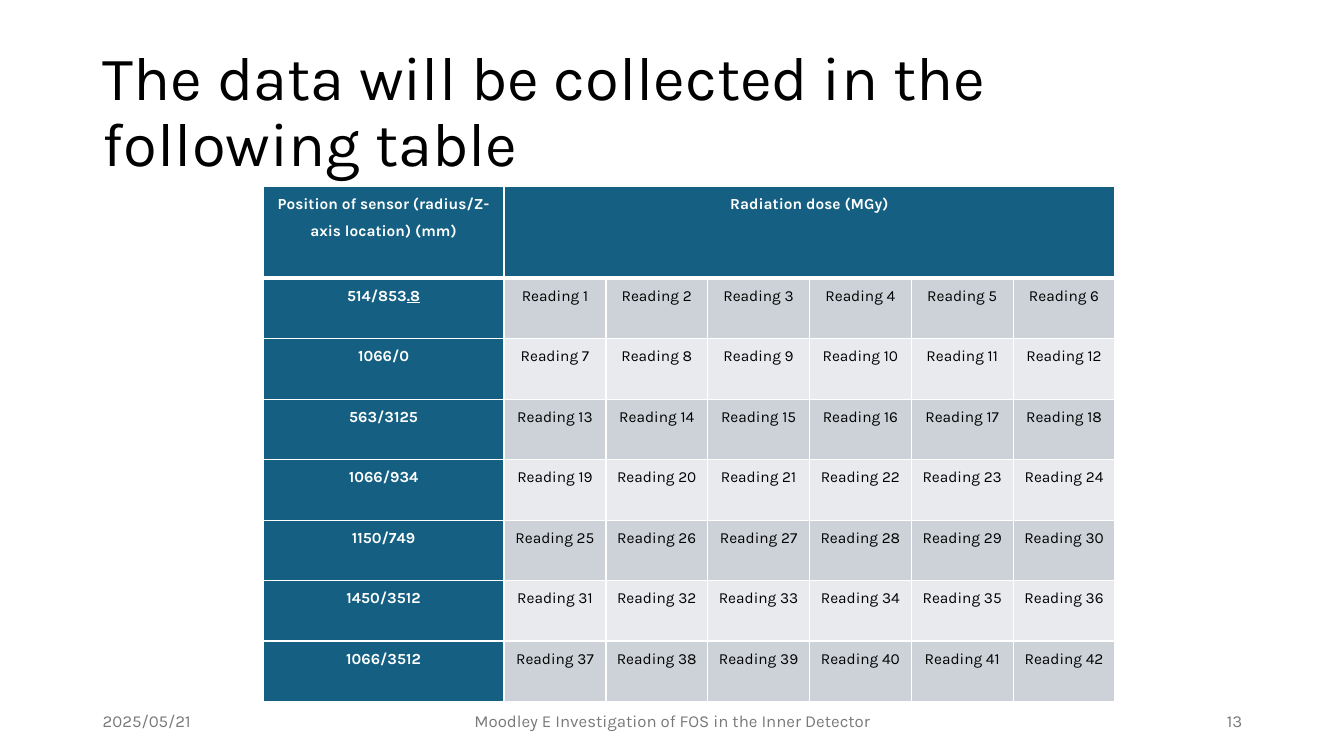
from pptx import Presentation
from pptx.dml.color import RGBColor
from pptx.enum.text import MSO_ANCHOR as Anchor, PP_ALIGN as Align
from pptx.oxml import parse_xml
from pptx.oxml.ns import nsdecls
from pptx.util import Inches, Pt

# Content
TITLE = "The data will be collected in the following table"
HEADERS = ["Position of sensor (radius/Z-axis location) (mm)", "Radiation dose (MGy)"]
# Each position is a plain part and an underlined part
POSITIONS = [("514/853", ".8"), ("1066/0", ""), ("563/3125", ""), ("1066/934", ""),
             ("1150/749", ""), ("1450/3512", ""), ("1066/3512", "")]
READINGS_PER_ROW = 6
# Text, left, width, alignment
FOOTERS = [
    ("2025/05/21", 0.92, 3, Align.LEFT),
    ("Moodley E Investigation of FOS in the Inner Detector", 4.42, 4.5, Align.CENTER),
    ("13", 9.42, 3, Align.RIGHT),
]

# Style and grid, in inches
FONT = "Karla"
BLACK = RGBColor(0x00, 0x00, 0x00)
WHITE = RGBColor(0xFF, 0xFF, 0xFF)
GREY = RGBColor(0x79, 0x79, 0x79)
TEAL = RGBColor(0x15, 0x60, 0x82)
BANDS = [RGBColor(0xCC, 0xD2, 0xD8), RGBColor(0xE8, 0xEA, 0xED)]
COLUMNS = [2.39] + [1.01] * READINGS_PER_ROW
ROWS = [0.91] + [0.6] * len(POSITIONS)
TABLE_LEFT, TABLE_TOP = 2.61, 1.85
FOOTER_TOP, FOOTER_HEIGHT = 6.95, 0.4


def add_span(para, text, size, color, **formats):
    span = para.add_run()
    span.text = text
    span.font.color.rgb = color
    for name, value in {"name": FONT, "size": Pt(size), **formats}.items():
        setattr(span.font, name, value)


def draw_borders(cell, top, bottom):
    props = cell._tc.get_or_add_tcPr()
    widths = {"lnL": 1, "lnR": 1, "lnT": top, "lnB": bottom}
    for index, (side, width) in enumerate(widths.items()):
        props.insert(index, parse_xml(
            f'<a:{side} {nsdecls("a")} w="{Pt(width)}"><a:solidFill>'
            f'<a:srgbClr val="{WHITE}"/></a:solidFill></a:{side}>'))


def fill_cell(cell, parts, fill, color, bold):
    cell.fill.solid()
    cell.fill.fore_color.rgb = fill
    margins = {"margin_left": 0.07, "margin_right": 0.07, "margin_top": 0, "margin_bottom": 0}
    for name, value in margins.items():
        setattr(cell, name, Inches(value))
    para = cell.text_frame.paragraphs[0]
    para.alignment, para.line_spacing, para.space_after = Align.CENTER, 1.5, Pt(8)
    for part, underline in zip(parts, (False, True)):
        if part:
            add_span(para, part, 11, color, bold=bold, underline=underline)


deck = Presentation()
deck.slide_width, deck.slide_height = Inches(13.33), Inches(7.5)
page = deck.slides.add_slide(deck.slide_layouts[5])

# Title
title = page.shapes.title
title.left, title.top, title.width, title.height = map(Inches, (0.92, 0.4, 11.5, 1.45))
title.text_frame.vertical_anchor = Anchor.MIDDLE
title.text_frame.word_wrap = True
para = title.text_frame.paragraphs[0]
para.alignment, para.line_spacing = Align.LEFT, 0.9
add_span(para, TITLE, 44, BLACK)

# Table
table = page.shapes.add_table(
    len(ROWS), len(COLUMNS), Inches(TABLE_LEFT), Inches(TABLE_TOP),
    Inches(sum(COLUMNS)), Inches(sum(ROWS))).table
for column, width in zip(table.columns, COLUMNS):
    column.width = Inches(width)
for row, height in zip(table.rows, ROWS):
    row.height = Inches(height)
for r in range(len(ROWS)):
    for c in range(len(COLUMNS)):
        draw_borders(table.cell(r, c), top=3 if r == 1 else 1, bottom=3 if r == 0 else 1)

table.cell(0, 1).merge(table.cell(0, READINGS_PER_ROW))
for c, header in enumerate(HEADERS):
    fill_cell(table.cell(0, c), [header], TEAL, WHITE, True)
for r, position in enumerate(POSITIONS):
    fill_cell(table.cell(r + 1, 0), position, TEAL, WHITE, True)
    for c in range(1, READINGS_PER_ROW + 1):
        reading = f"Reading {r * READINGS_PER_ROW + c}"
        fill_cell(table.cell(r + 1, c), [reading], BANDS[r % 2], BLACK, False)

# Footer
for text, left, width, alignment in FOOTERS:
    box = page.shapes.add_textbox(*map(Inches, (left, FOOTER_TOP, width, FOOTER_HEIGHT)))
    box.text_frame.word_wrap = True
    box.text_frame.vertical_anchor = Anchor.MIDDLE
    para = box.text_frame.paragraphs[0]
    para.alignment = alignment
    add_span(para, text, 12, GREY)

deck.save("out.pptx")
